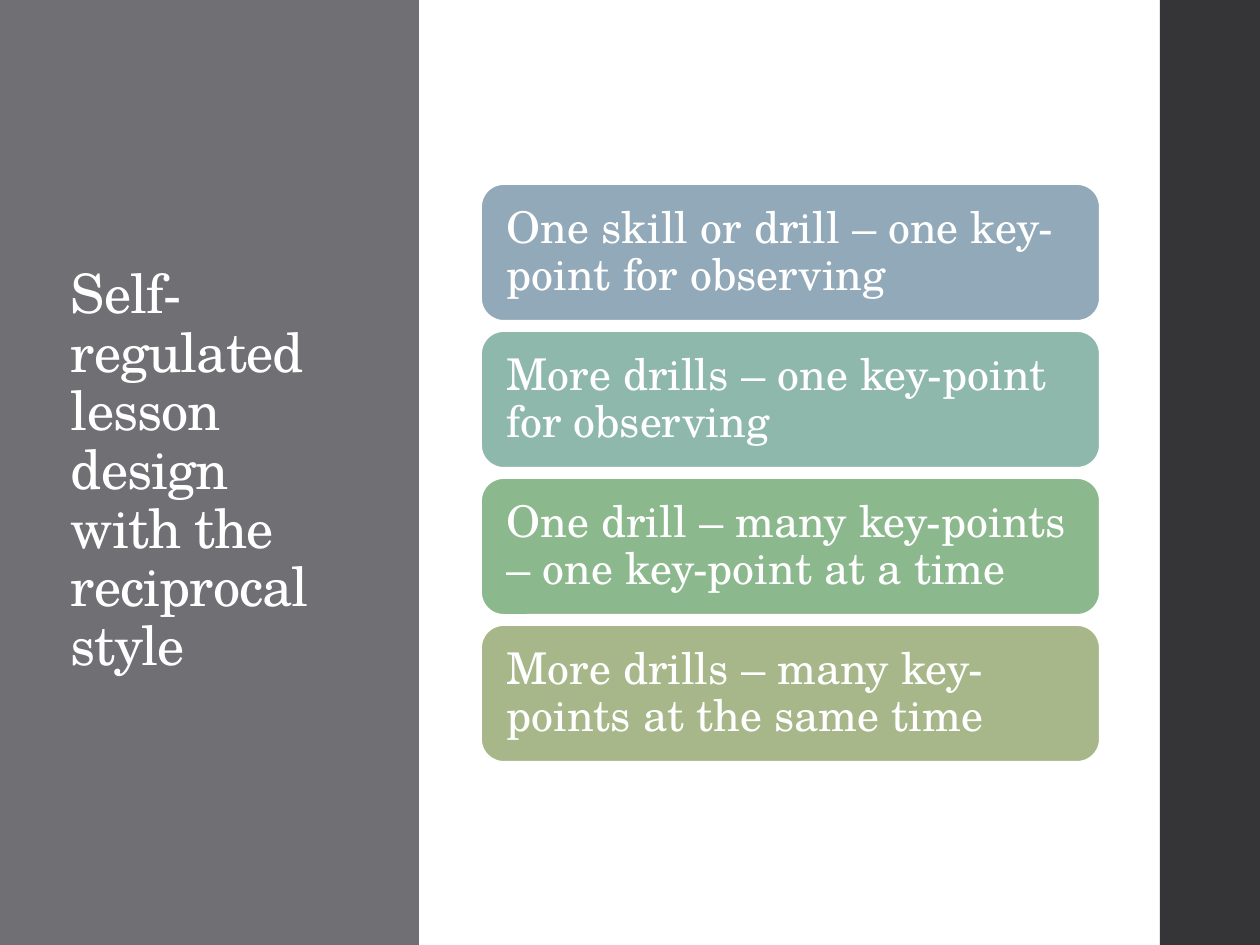
from pptx import Presentation
from pptx.dml.color import RGBColor
from pptx.enum.shapes import MSO_SHAPE
from pptx.enum.text import MSO_ANCHOR, MSO_AUTO_SIZE, PP_ALIGN
from pptx.util import Pt

PX = 914400 // 126  # EMU in one px
FONT = "TeX Gyre Schola"
COLORS = {
    "white": "FFFFFF",
    "panel": "6F6F74",
    "strip": "353537",
    "blue": "92A9B9",
    "teal": "8FB8AD",
    "green": "8CB88E",
    "olive": "A7B789",
}
CARDS = [
    ("blue", "One skill or drill – one key-point for observing"),
    ("teal", "More drills – one key-point for observing"),
    ("green", "One drill – many key-points – one key-point at a time"),
    ("olive", "More drills – many key-points at the same time"),
]
TOP, PITCH = 184, 147


def color(name):
    return RGBColor.from_string(COLORS[name])


def add_block(slide, kind, box, fill):
    shape = slide.shapes.add_shape(kind, *(n * PX for n in box))
    shape.shadow.inherit = False
    shape.fill.solid()
    shape.fill.fore_color.rgb = color(fill)
    shape.line.fill.background()
    return shape


def write(frame, text, size, inset):
    """Fill a text frame with one left-aligned, middle-anchored paragraph."""
    frame.word_wrap = True
    frame.auto_size = MSO_AUTO_SIZE.NONE
    frame.vertical_anchor = MSO_ANCHOR.MIDDLE
    frame.margin_left = frame.margin_right = inset * PX
    para = frame.paragraphs[0]
    para.alignment = PP_ALIGN.LEFT
    para.line_spacing = 0.9
    run = para.add_run()
    run.text = text
    run.font.name = FONT
    run.font.size = Pt(size)
    run.font.color.rgb = color("white")
    return run


def add_title(slide, text):
    title = slide.shapes.title
    title.left, title.top, title.width, title.height = (
        n * PX for n in (58, 115, 281, 714))
    run = write(title.text_frame, text, 31, 13)
    run.font._element.set("spc", "-50")  # tighter letters
    slide.shapes._spTree.append(title._element)  # in front of the panel


def add_card(slide, row, fill, text):
    box = (481, TOP + row * PITCH, 619, 137)
    card = add_block(slide, MSO_SHAPE.ROUNDED_RECTANGLE, box, fill)
    card.line.color.rgb = color("white")
    card.line.width = Pt(1.1)
    write(card.text_frame, text, 25, 19)


def main():
    deck = Presentation()
    deck.slide_width, deck.slide_height = 1260 * PX, 945 * PX
    slide = deck.slides.add_slide(deck.slide_layouts[5])

    # Side panels
    add_block(slide, MSO_SHAPE.RECTANGLE, (1160, 0, 100, 945), "strip")
    add_block(slide, MSO_SHAPE.RECTANGLE, (0, 0, 419, 945), "panel")

    # Title
    add_title(slide, "Self-regulated lesson design with the reciprocal style")

    # Stack of cards
    for row, (fill, text) in enumerate(CARDS):
        add_card(slide, row, fill, text)

    deck.save("out.pptx")


if __name__ == "__main__":
    main()
